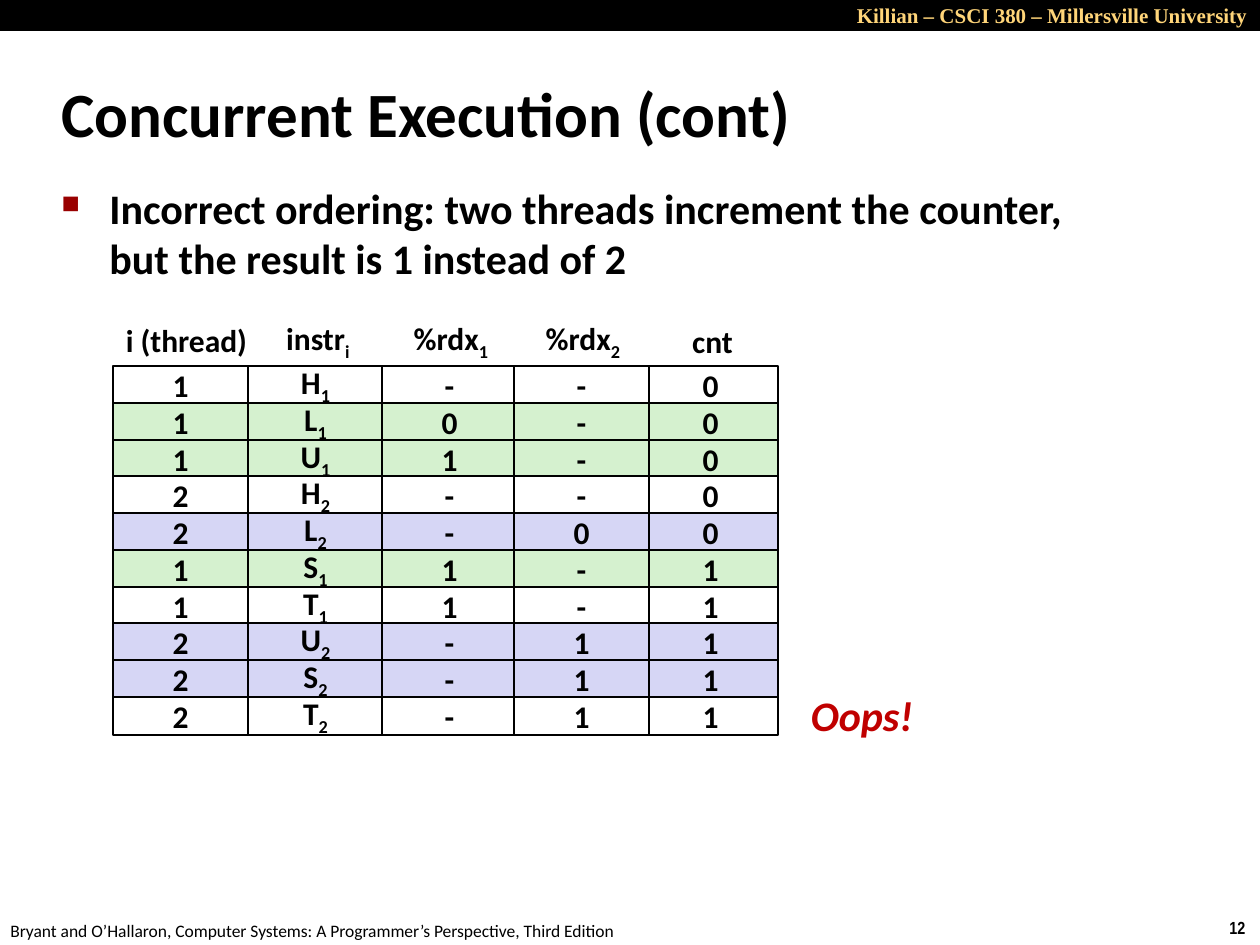
from lxml import etree
from pptx import Presentation
from pptx.dml.color import RGBColor
from pptx.enum.shapes import MSO_SHAPE
from pptx.enum.text import MSO_ANCHOR, MSO_AUTO_SIZE, PP_ALIGN
from pptx.oxml.ns import qn
from pptx.util import Emu, Pt

RECTANGLE = MSO_SHAPE.RECTANGLE
GROW, FIXED = MSO_AUTO_SIZE.SHAPE_TO_FIT_TEXT, MSO_AUTO_SIZE.NONE
TOP, MIDDLE = MSO_ANCHOR.TOP, MSO_ANCHOR.MIDDLE
LEFT, CENTER, RIGHT = PP_ALIGN.LEFT, PP_ALIGN.CENTER, PP_ALIGN.RIGHT

BLACK, WHITE, GREEN, LILAC = "000000", "FFFFFF", "D5F1CF", "D6D6F5"
GOLD, RED, BULLET_RED = "FFD579", "C00000", "990000"

CELL_WIDTH, CELL_HEIGHT = 135, 38
TRACE_WIDTH, TRACE_HEIGHT = 664, 369
COLUMN_OFFSETS = [0, 135, 269, 401, 530]
DRAWING_ORDER = [1, 0, 2, 4, 3]
HEADINGS = [
    ("i (thread)", "", 0, 0, 147),
    ("instr", "i", 160, 1, 90),
    ("%rdx", "1", 287, 1, 102),
    ("%rdx", "2", 419, 1, 102),
    ("cnt", "", 566, 1, 67),
]
STEPS = [
    ("1", "H", "-", "-", "0", WHITE),
    ("1", "L", "0", "-", "0", GREEN),
    ("1", "U", "1", "-", "0", GREEN),
    ("2", "H", "-", "-", "0", WHITE),
    ("2", "L", "-", "0", "0", LILAC),
    ("1", "S", "1", "-", "1", GREEN),
    ("1", "T", "1", "-", "1", WHITE),
    ("2", "U", "-", "1", "1", LILAC),
    ("2", "S", "-", "1", "1", LILAC),
    ("2", "T", "-", "1", "1", WHITE),
]


def px(length):
    return Emu(round(length * 914400 / 126))


def color(value):
    return RGBColor.from_string(value)


def add_run(paragraph, text, size, ink=BLACK, font="Calibri", bold=True, italic=False, subscript=False):
    run = paragraph.add_run()
    run.text = text
    run.font.size = Pt(size)
    run.font.name = font
    run.font.bold = bold
    run.font.italic = italic
    run.font.color.rgb = color(ink)
    if subscript:
        run._r.get_or_add_rPr().set("baseline", "-25000")


def add_indexed(paragraph, text, index):
    add_run(paragraph, text, 18)
    if index:
        add_run(paragraph, index, 18, subscript=True)


def add_text_box(slide, box, align=LEFT, anchor=TOP, wrap=False, size_rule=GROW):
    frame = slide.shapes.add_textbox(*map(px, box)).text_frame
    frame.auto_size = size_rule
    frame.word_wrap = wrap
    frame.vertical_anchor = anchor
    paragraph = frame.paragraphs[0]
    paragraph.alignment = align
    return paragraph


def add_rectangle(slide, box, fill):
    rectangle = slide.shapes.add_shape(RECTANGLE, *map(px, box))
    rectangle.shadow.inherit = False
    rectangle.fill.solid()
    rectangle.fill.fore_color.rgb = color(fill)
    return rectangle


def set_indent(paragraph, indent):
    properties = paragraph._p.get_or_add_pPr()
    properties.set("marL", str(px(indent)))
    properties.set("indent", str(-px(indent)))
    return properties


def add_course_bar(slide, left, top, width, height):
    bar = add_rectangle(slide, (left, top, width, height), BLACK)
    bar.line.fill.background()
    course = add_text_box(slide, (left + 567, top - 4, width - 567, 38), RIGHT, wrap=True)
    add_run(course, "Killian – CSCI 380 – Millersville University", 12, GOLD, "Times New Roman")


def add_title(slide, *box):
    title = add_text_box(slide, box, anchor=MIDDLE, wrap=True, size_rule=FIXED)
    set_indent(title, 16)
    add_run(title, "Concurrent Execution (cont)", 36)


def add_claim(slide, *box):
    claim = add_text_box(slide, box, wrap=True, size_rule=FIXED)
    claim.space_before = Pt(5)
    properties = set_indent(claim, 48)
    bullet_color = etree.SubElement(properties, qn("a:buClr"))
    etree.SubElement(bullet_color, qn("a:srgbClr"), val=BULLET_RED)
    etree.SubElement(properties, qn("a:buSzPct"), val="60000")
    etree.SubElement(properties, qn("a:buChar"), char="■")
    add_run(claim, "Incorrect ordering: two threads increment the counter, "
                   "but the result is 1 instead of 2", 24)


def add_headings(slide, left, top, height):
    for label, index, offset, drop, width in HEADINGS:
        heading = add_text_box(slide, (left + offset, top + drop, width, height), CENTER, MIDDLE)
        add_indexed(heading, label, index)


def add_cell(slide, box, text, index, shade):
    cell = add_rectangle(slide, box, shade)
    cell.line.color.rgb = color(BLACK)
    cell.line.width = Pt(1)
    cell.text_frame.word_wrap = True
    cell.text_frame.vertical_anchor = MIDDLE
    paragraph = cell.text_frame.paragraphs[0]
    paragraph.alignment = CENTER
    add_indexed(paragraph, text, index)


def add_trace(slide, left, top):
    add_headings(slide, left, top - 51, 50)
    pitch = (TRACE_HEIGHT - CELL_HEIGHT) / (len(STEPS) - 1)
    for column in DRAWING_ORDER:
        for row, (*values, shade) in enumerate(STEPS):
            box = (left + COLUMN_OFFSETS[column], top + round(row * pitch), CELL_WIDTH, CELL_HEIGHT)
            thread = values[0] if column == 1 else ""
            add_cell(slide, box, values[column], thread, shade)
    verdict = add_text_box(slide, (left + TRACE_WIDTH + 21, top + TRACE_HEIGHT - 52, 128, 63),
                           CENTER, MIDDLE)
    add_run(verdict, "Oops!", 24, RED, italic=True)


def add_footer(slide, left, top, width, height):
    number = add_text_box(slide, (left + width - 43, top, 43, height))
    add_run(number, "12", 10, font="Arial Narrow")
    source = add_text_box(slide, (left - 2, top + 3, 640, height))
    add_run(source, "Bryant and O’Hallaron, Computer Systems: "
                    "A Programmer’s Perspective, Third Edition", 10, bold=False)


def main():
    deck = Presentation()
    deck.slide_width, deck.slide_height = px(1260), px(945)
    slide = deck.slides.add_slide(deck.slide_layouts[6])
    add_footer(slide, 0, 911, 1260, 34)
    add_course_bar(slide, 0, 0, 1260, 31)
    add_title(slide, 49, 60, 1046, 105)
    add_claim(slide, 49, 176, 1089, 118)
    add_trace(slide, 113, 366)
    deck.save("out.pptx")


if __name__ == "__main__":
    main()
